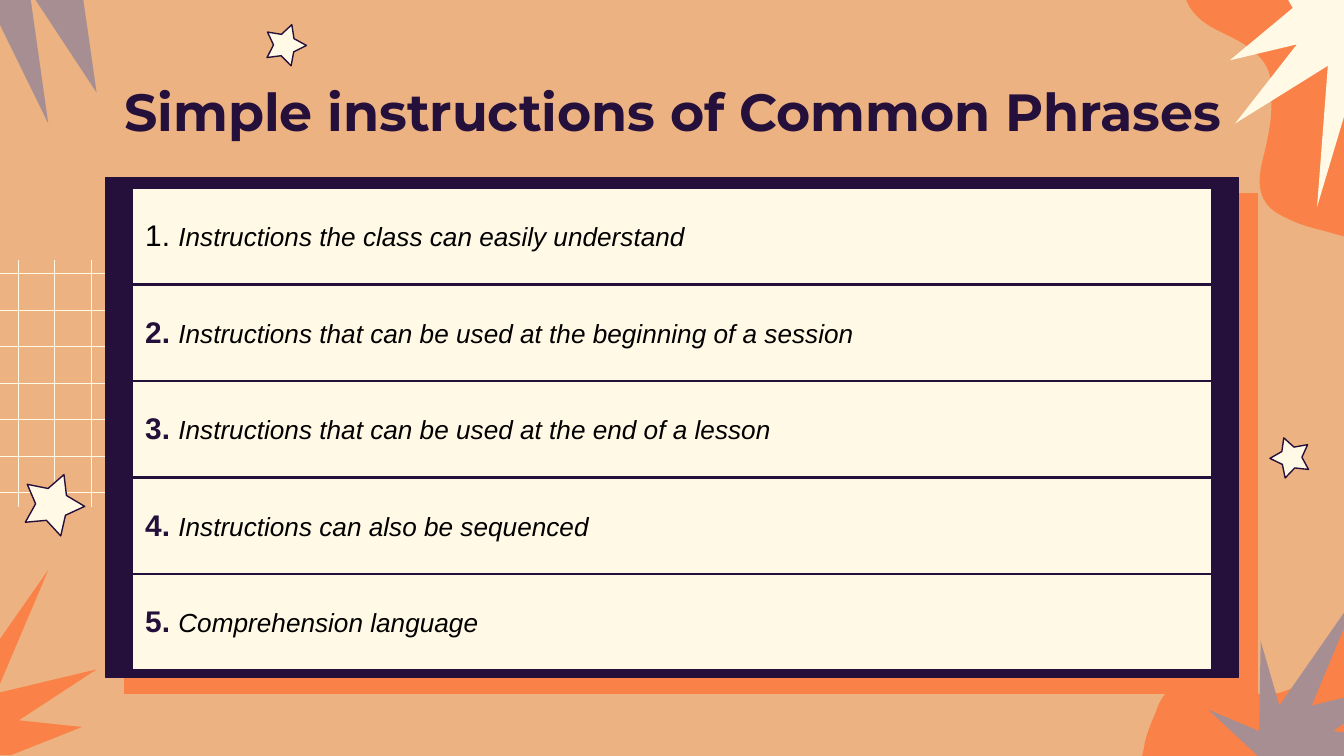
"""Build the slide "Simple instructions of Common Phrases"."""
from math import cos, radians, sin
from typing import NamedTuple

from lxml import etree
from pptx import Presentation
from pptx.dml.color import RGBColor
from pptx.enum import shapes, text
from pptx.oxml import parse_xml
from pptx.oxml.ns import nsdecls, qn
from pptx.util import Pt

COLOURS = {
    "sand": "ECB281",
    "orange": "FA8147",
    "mauve": "A78E92",
    "cream": "FFF9E5",
    "plum": "25103B",
    "black": "000000",
}
CURVE_STEPS = 10
GRID_GAP = 19.55


class Blob(NamedTuple):
    colour: str
    start: tuple[float, float]
    steps: list[tuple[float, ...]]


class Star(NamedTuple):
    x: float
    y: float
    radius: float
    angle: float


class Item(NamedTuple):
    phrase: str
    number_colour: str = "plum"
    number_bold: bool = True


BLOBS = [
    Blob("orange", (726.5, 330.5), [
        (717.1, 331.9, 711.4, 340.6, 707.8, 348.5), (703.4, 357.1, 699.1, 367.2, 689, 370.1),
        (685.4, 371.5, 681.1, 372.2, 676.8, 372.2), (675.4, 372.2, 673.9, 371.5, 672.5, 371.5),
        (666, 371.5, 660.2, 370.8, 654.5, 368.6), (649.4, 367.9, 643.7, 366.5, 637.9, 366.5),
        (634.3, 366.5, 630.7, 367.2, 627.1, 369.4), (622.8, 372.2, 620.6, 377.3, 619.2, 381.6),
        (617, 386.6, 614.9, 391.7, 613.4, 397.4), (612.7, 402.5, 611.3, 407.5, 609.8, 412.6),
        (716.4, 412.6), (722.2, 412.6, 726.5, 407.5, 726.5, 401.8)]),
    Blob("orange", (634.3, -5), [
        (635.8, 6.5, 645.1, 13, 654.5, 17.3), (664.6, 22.3, 675.4, 27.4, 679.7, 38.2),
        (681.8, 44.6, 681.1, 51.1, 681.1, 57.6), (681.1, 64.8, 679.7, 71.3, 678.2, 78.5),
        (676.1, 87.8, 671.8, 99.4, 678.2, 108.7), (681.8, 113.8, 687.6, 115.9, 691.9, 118.1),
        (698.4, 121, 704.2, 122.4, 709.9, 123.8), (717.1, 126, 724.3, 127.4, 730.8, 130.3),
        (730.8, 7.2), (730.8, 0, 725.8, -5, 719.3, -5)]),
    Blob("orange", (25.9, 305.3), [
        (-14.4, 362.9), (-14.4, 404.6), (5.8, 404.6), (43.9, 389.5), (10.1, 385.9),
        (51.8, 358.6), (-2.2, 371.5)]),
    Blob("mauve", (726.5, 319), [
        (685.4, 378), (675.4, 343.4), (674.6, 391.7), (647.3, 380.2), (678.2, 409),
        (673.2, 412.6), (710.6, 412.6), (709.9, 409), (726.5, 402.5), (726.5, 393.1),
        (714.2, 391.7), (726.5, 383), (726.5, 372.2), (702.7, 378), (726.5, 321.1)]),
    Blob("cream", (687.6, -4.3), [
        (692.6, 4.3), (658.8, 32.4), (694.8, 23.8), (661.7, 66.2), (711.4, 35.3),
        (705.6, 110.9), (730.1, 28.8), (730.8, 29.5), (730.8, -4.3)]),
    Blob("mauve", (-9.4, -20.2), [
        (-15.1, -20.2, -20.2, -15.1, -20.2, -9.4), (-20.2, 88.6), (-18, 105.1), (-7.2, -1.4),
        (25.9, 66.2), (15.8, -5), (51.8, 49.7), (41.8, -20.2)]),
]
STARS = [Star(691.6, 245.2, 11.3, 178), Star(152.6, 24.2, 11.6, 1), Star(28.1, 270.4, 17.3, 3)]
ITEMS = [
    Item("Instructions the class can easily understand", "black", False),
    Item("Instructions that can be used at the beginning of a session"),
    Item("Instructions that can be used at the end of a lesson"),
    Item("Instructions can also be sequenced"),
    Item("Comprehension language"),
]


def colour(name: str) -> RGBColor:
    """Return a named colour."""
    return RGBColor.from_string(COLOURS[name])


def outline_points(blob: Blob) -> list[tuple[float, float]]:
    """Flatten the lines and Bézier curves of a blob."""
    points = [blob.start]
    for step in blob.steps:
        if len(step) == 2:
            points.append(step)
            continue
        controls = [points[-1], step[0:2], step[2:4], step[4:6]]
        for index in range(1, CURVE_STEPS + 1):
            t = index / CURVE_STEPS
            weights = ((1 - t) ** 3, 3 * t * (1 - t) ** 2, 3 * t * t * (1 - t), t ** 3)
            points.append(tuple(sum(w * c[axis] for w, c in zip(weights, controls))
                                for axis in (0, 1)))
    return points


def star_points(star: Star) -> list[tuple[float, float]]:
    """Return the ten corners of a star."""
    points = []
    for index in range(10):
        reach = star.radius * (0.52 if index % 2 else 1)
        angle = radians(star.angle + 36 * index)
        points.append((star.x + reach * cos(angle), star.y + reach * sin(angle)))
    return points


def draw_polygon(page, points: list[tuple[float, float]], fill: str, outlined: bool = False) -> None:
    """Draw a closed filled outline."""
    corners = [(Pt(x), Pt(y)) for x, y in points]
    builder = page.shapes.build_freeform(*corners[0])
    builder.add_line_segments(corners[1:], close=True)
    shape = builder.convert_to_shape()
    shape.shadow.inherit = False
    paint(shape, fill, outlined)


def paint(shape, fill: str, outlined: bool) -> None:
    """Set the fill and line of a shape."""
    shape.fill.solid()
    shape.fill.fore_color.rgb = colour(fill)
    if outlined:
        shape.line.color.rgb = colour("plum")
        shape.line.width = Pt(0.75)
    else:
        shape.line.fill.background()


def draw_grid_line(page, x1: float, y1: float, x2: float, y2: float) -> None:
    """Draw one thin grid line."""
    line = page.shapes.add_connector(shapes.MSO_CONNECTOR.STRAIGHT, Pt(x1), Pt(y1), Pt(x2), Pt(y2))
    line.line.color.rgb = colour("cream")
    line.line.width = Pt(0.5)
    etree.SubElement(line._element.spPr, qn("a:effectLst"))


def add_span(para, words: str, font: str, size: float, ink: str,
             bold: bool = False, italic: bool = False) -> None:
    """Add one formatted run."""
    span = para.add_run()
    span.text = words
    span.font.name = font
    span.font.size = Pt(size)
    span.font.bold = bold
    span.font.italic = italic
    span.font.color.rgb = colour(ink)


def draw_title(page) -> None:
    """Draw the heading."""
    box = page.shapes.add_textbox(Pt(56.9), Pt(35.3), Pt(607), Pt(45.4))
    frame = box.text_frame
    frame.word_wrap = True
    frame.margin_left = frame.margin_right = frame.margin_top = frame.margin_bottom = Pt(7.2)
    para = frame.paragraphs[0]
    para.alignment = text.PP_ALIGN.CENTER
    add_span(para, "Simple instructions of Common Phrases", "Montserrat", 28, "plum", bold=True)


def draw_panel(page) -> None:
    """Draw the dark panel with its hard shadow."""
    panel = page.shapes.add_shape(shapes.MSO_SHAPE.RECTANGLE, Pt(56.4), Pt(95.2), Pt(607), Pt(267.6))
    paint(panel, "plum", True)
    panel._element.spPr.append(parse_xml(
        f'<a:effectLst {nsdecls("a")}><a:outerShdw dist="{Pt(13.5)}" dir="2400000" algn="bl" '
        f'rotWithShape="0"><a:srgbClr val="{COLOURS["orange"]}"/></a:outerShdw></a:effectLst>'))


def draw_table(page) -> None:
    """Draw the list of instructions as a table."""
    table = page.shapes.add_table(len(ITEMS), 1, Pt(70.6), Pt(100.8), Pt(578.9), Pt(258.5)).table
    table.first_row = table.horz_banding = False
    for number, item in enumerate(ITEMS, 1):
        cell = table.cell(number - 1, 0)
        cell.margin_left = cell.margin_right = Pt(7.2)
        cell.margin_top = cell.margin_bottom = Pt(0)
        cell.vertical_anchor = text.MSO_ANCHOR.MIDDLE
        for side in ("lnL", "lnR", "lnT", "lnB"):
            cell._tc.get_or_add_tcPr().append(parse_xml(
                f'<a:{side} {nsdecls("a")} w="{Pt(1.5)}"><a:solidFill>'
                f'<a:srgbClr val="{COLOURS["plum"]}"/></a:solidFill></a:{side}>'))
        cell.fill.solid()
        cell.fill.fore_color.rgb = colour("cream")
        para = cell.text_frame.paragraphs[0]
        add_span(para, f"{number}. ", "Arial", 16, item.number_colour, bold=item.number_bold)
        add_span(para, item.phrase, "Arial", 14, "black", italic=True)


def main() -> None:
    """Build and save the deck."""
    deck = Presentation()
    deck.slide_width, deck.slide_height = Pt(720), Pt(405)
    page = deck.slides.add_slide(deck.slide_layouts[6])
    page.background.fill.solid()
    page.background.fill.fore_color.rgb = colour("sand")
    for column in range(3):
        x = 9.9 + column * GRID_GAP
        draw_grid_line(page, x, 139.2, x, 271.4)
    for row in range(7):
        y = 146.6 + row * GRID_GAP
        draw_grid_line(page, -74.9, y, 56.2, y)
    for blob in BLOBS:
        draw_polygon(page, outline_points(blob), blob.colour)
    for star in STARS:
        draw_polygon(page, star_points(star), "cream", outlined=True)
    draw_title(page)
    draw_panel(page)
    draw_table(page)
    deck.save("out.pptx")


if __name__ == "__main__":
    main()
